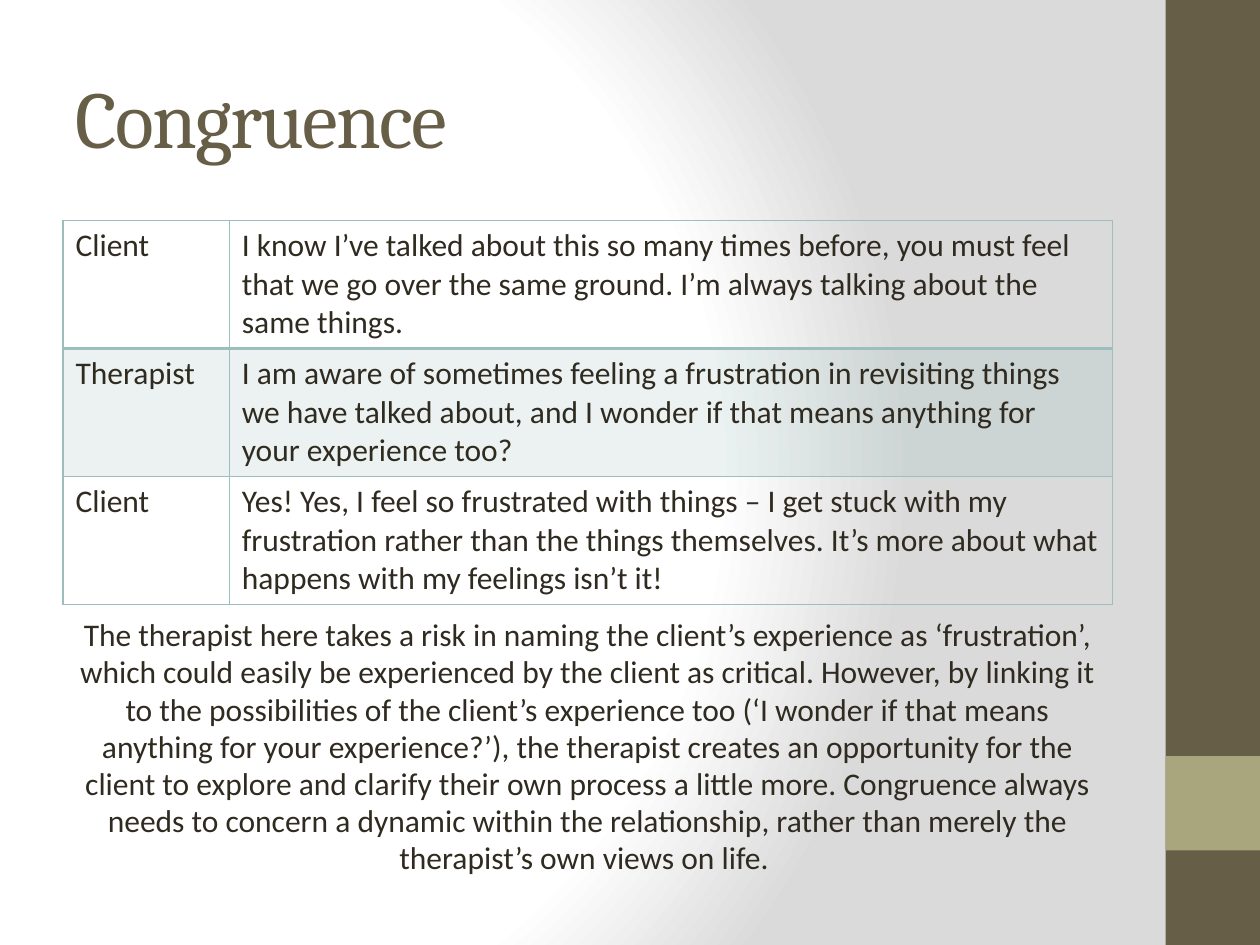
from lxml.etree import SubElement
from pptx import Presentation
from pptx.dml.color import RGBColor
from pptx.enum.shapes import MSO_SHAPE
from pptx.enum.text import MSO_ANCHOR, PP_ALIGN
from pptx.oxml import parse_xml
from pptx.oxml.ns import nsdecls, qn
from pptx.util import Inches, Pt

THEME = {
    "olive": "675E47", "sage": "A9A57C", "ink": "2F2B20", "teal": "9CBEBD",
    "white": "FFFFFF", "grey": "DADADA",
    "title": {"name": "Cambria", "size": Pt(46)},
    "body": {"name": "Calibri", "size": Pt(18)},
}

prs = Presentation()
prs.slide_width, prs.slide_height = Inches(10), Inches(7.5)
W, H = prs.slide_width, prs.slide_height
LEFT, WIDTH = int(W * 0.05), int(W * 0.833)
slide = prs.slides.add_slide(prs.slide_layouts[6])


def write(tf, text, font, color, align=PP_ALIGN.LEFT):
    tf.word_wrap = True
    p = tf.paragraphs[0]
    p.alignment = align
    r = p.add_run()
    r.text = text
    for key, value in THEME[font].items():
        setattr(r.font, key, value)
    r.font.color.rgb = RGBColor.from_string(THEME[color])
    return p


def solid(parent, color, alpha=100):
    fill = SubElement(parent, qn("a:solidFill"))
    clr = SubElement(fill, qn("a:srgbClr"), val=color)
    SubElement(clr, qn("a:alpha"), val=str(alpha * 1000))


# Background: circular gradient
slide.background.fill.gradient()
grad = slide.element.find(".//" + qn("a:gradFill"))
stops = "".join(
    f'<a:gs pos="{pos}000"><a:srgbClr val="{THEME[c]}"/></a:gs>'
    for pos, c in ((0, "white"), (75, "white"), (100, "grey")))
grad.getparent().replace(grad, parse_xml(
    f'<a:gradFill {nsdecls("a")} rotWithShape="1"><a:gsLst>{stops}</a:gsLst>'
    '<a:path path="circle"><a:fillToRect l="20000" t="50000" r="100000" b="50000"/>'
    '</a:path></a:gradFill>'))

# Side band and its accent square
band = int(W * 0.075)
for top, height, color in ((0, H, "olive"), (int(H * 0.8), band, "sage")):
    sp = slide.shapes.add_shape(MSO_SHAPE.RECTANGLE, W - band, top, band, height)
    sp.shadow.inherit = False
    sp.fill.solid()
    sp.fill.fore_color.rgb = RGBColor.from_string(THEME[color])
    sp.line.fill.background()

# Title
tf = slide.shapes.add_textbox(LEFT, int(H * 0.04), WIDTH, int(H / 6)).text_frame
tf.vertical_anchor = MSO_ANCHOR.MIDDLE
p = write(tf, "Congruence", "title", "olive")
p.runs[0].font._element.set("spc", "-100")

# Dialogue table
dialogue = [
    ("Client", "I know I’ve talked about this so many times before, you must feel "
     "that we go over the same ground. I’m always talking about the same things."),
    ("Therapist", "I am aware of sometimes feeling a frustration in revisiting things "
     "we have talked about, and I wonder if that means anything for your experience too?"),
    ("Client", "Yes! Yes, I feel so frustrated with things – I get stuck with my "
     "frustration rather than the things themselves. It’s more about what happens "
     "with my feelings isn’t it!"),
]
table = slide.shapes.add_table(
    len(dialogue), 2, LEFT, Inches(1.75), WIDTH, Inches(3.05)).table
table.first_row = table.horz_banding = False
table.columns[0].width = Inches(1.32)
table.columns[1].width = WIDTH - Inches(1.32)
for i, row in enumerate(dialogue):
    for j, text in enumerate(row):
        cell = table.cell(i, j)
        write(cell.text_frame, text, "body", "ink")
        tcPr = cell._tc.get_or_add_tcPr()
        # The rule below the first row is heavier
        heavy = {0: "B", 1: "T"}.get(i)
        for side in "LRTB":
            width = Pt(2 if side == heavy else 1)
            ln = SubElement(tcPr, qn(f"a:ln{side}"), w=str(width))
            solid(ln, THEME["teal"])
        if i == 1:
            solid(tcPr, THEME["teal"], 20)
        else:
            SubElement(tcPr, qn("a:noFill"))

# Commentary
tf = slide.shapes.add_textbox(LEFT, Inches(4.85), WIDTH, Inches(2.52)).text_frame
p = write(
    tf,
    "The therapist here takes a risk in naming the client’s experience as "
    "‘frustration’, which could easily be experienced by the client as critical. "
    "However, by linking it to the possibilities of the client’s experience too "
    "(‘I wonder if that means anything for your experience?’), the therapist creates "
    "an opportunity for the client to explore and clarify their own process a little "
    "more. Congruence always needs to concern a dynamic within the relationship, "
    "rather than merely the therapist’s own views on life. ",
    "body", "ink", PP_ALIGN.CENTER)
p.line_spacing = 0.98

prs.save("out.pptx")
